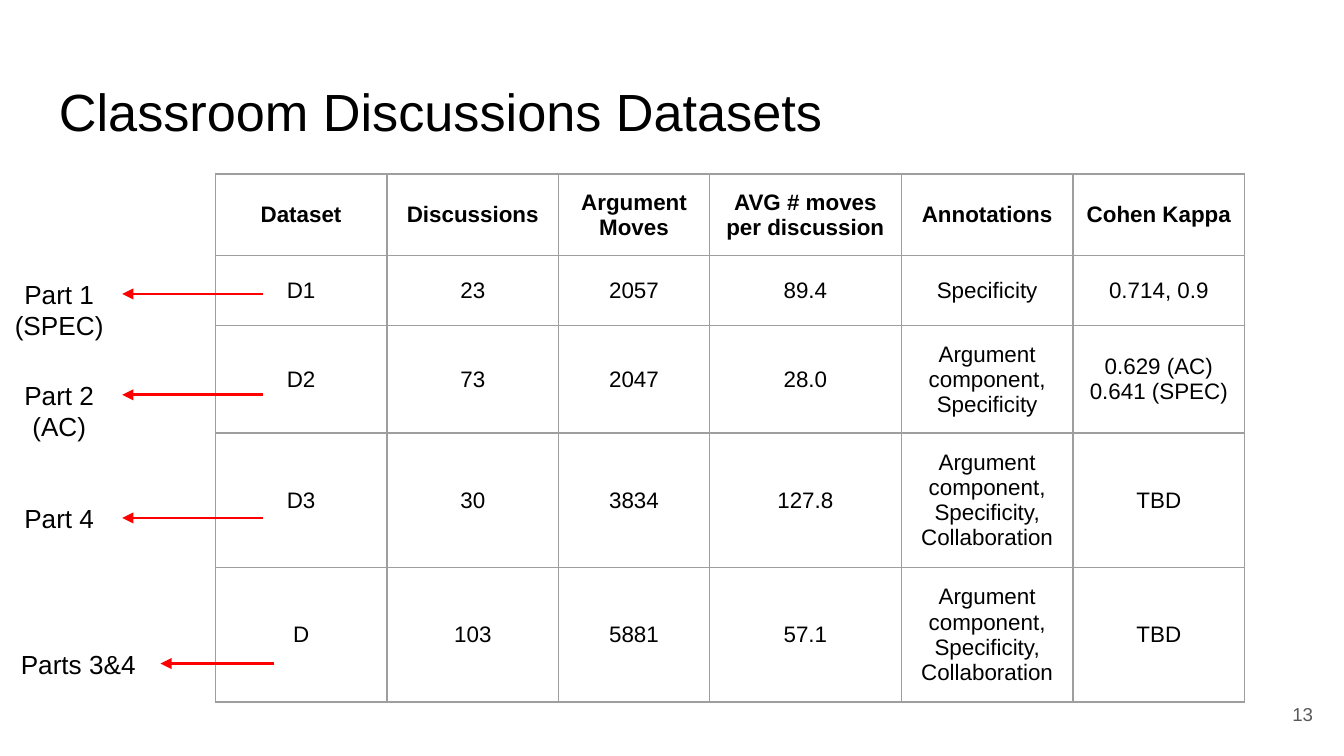
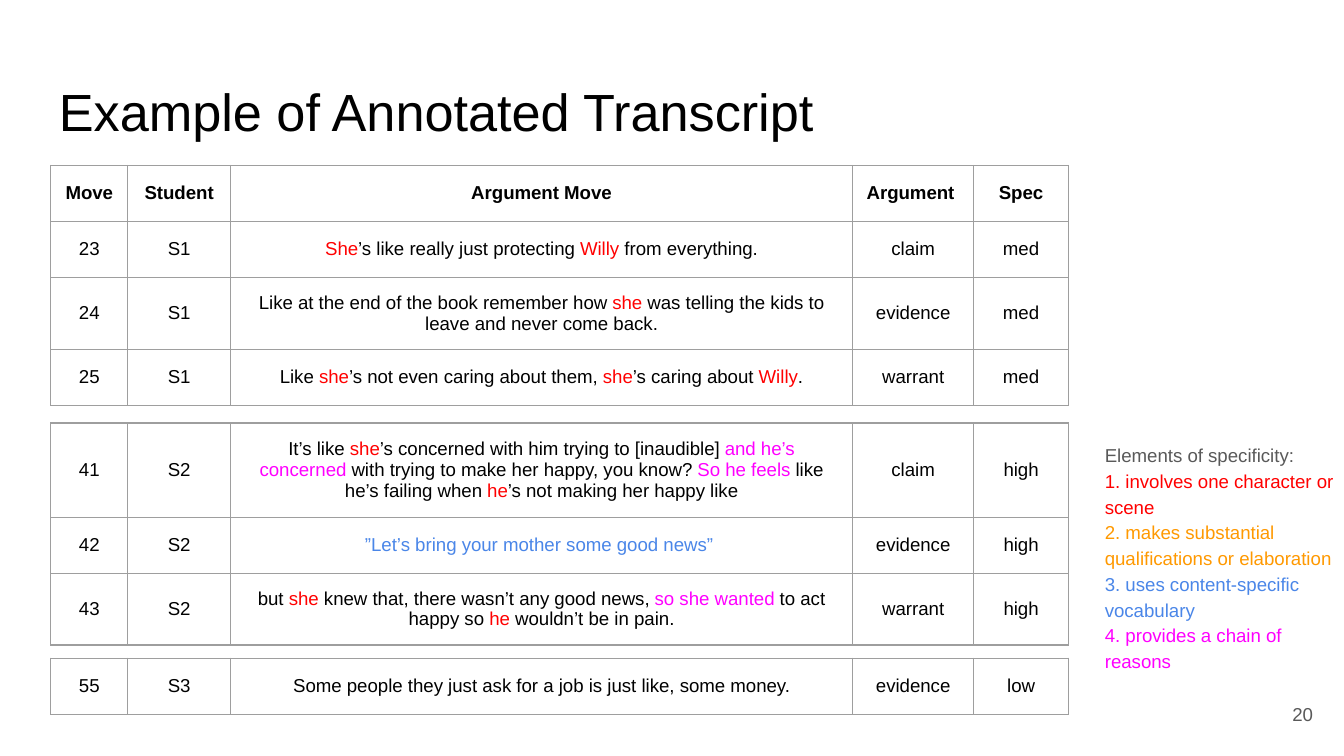
from lxml.etree import SubElement
from pptx import Presentation
from pptx.dml.color import RGBColor
from pptx.enum.shapes import MSO_CONNECTOR as LINE
from pptx.enum.text import MSO_ANCHOR as ANCHOR, PP_ALIGN as ALIGN
from pptx.oxml.ns import qn
from pptx.util import Pt

BLACK = RGBColor(0x00, 0x00, 0x00)
GREY = RGBColor(0x59, 0x59, 0x59)
RULE = RGBColor(0x9E, 0x9E, 0x9E)
RED = RGBColor(0xFF, 0x00, 0x00)
ORANGE = RGBColor(0xFF, 0x99, 0x00)
BLUE = RGBColor(0x4A, 0x86, 0xE8)
PINK = RGBColor(0xFF, 0x00, 0xFF)
PAD = Pt(7.2)


def write(box, lines, size, align=ALIGN.CENTER, color=BLACK, bold=False):
    """Fill a text frame; a line is a string or a list of (text, color) runs."""
    box.word_wrap = True
    for i, line in enumerate(lines):
        para = box.paragraphs[0] if i == 0 else box.add_paragraph()
        para.alignment = align
        for text, tint in [(line, color)] if isinstance(line, str) else line:
            run = para.add_run()
            run.text = text
            font = run.font
            font.name, font.size, font.bold = "Arial", Pt(size), bold
            font.color.rgb = tint


def add_grid(slide, left, top, cols, heights, rows, size, header=True):
    """Draw a ruled table; a cell is a string or a list of lines."""
    frame = slide.shapes.add_table(len(rows), len(cols), Pt(left), Pt(top),
                                   Pt(sum(cols)), Pt(sum(heights)))
    table = frame.table
    table.first_row = table.horz_banding = False
    for col, width in zip(table.columns, cols):
        col.width = Pt(width)
    for r, row in enumerate(rows):
        table.rows[r].height = Pt(heights[r])
        for c, item in enumerate(row):
            cell = table.cell(r, c)
            lines = [item] if isinstance(item, str) else item
            write(cell.text_frame, lines, size, bold=header and r == 0)
            cell.vertical_anchor = ANCHOR.MIDDLE
            cell.margin_left = cell.margin_right = PAD
            cell.margin_top = cell.margin_bottom = PAD
            props = cell._tc.get_or_add_tcPr()
            for side in ("a:lnL", "a:lnR", "a:lnT", "a:lnB"):
                edge = SubElement(props, qn(side), w=str(Pt(0.75)))
                fill = SubElement(edge, qn("a:solidFill"))
                SubElement(fill, qn("a:srgbClr"), val=str(RULE))
            cell.fill.background()


deck = Presentation()
deck.slide_width, deck.slide_height = Pt(720), Pt(405)

# Titles and page numbers
slides = []
for title, page in [("Classroom Discussions Datasets", "13"),
                    ("Example of Annotated Transcript", "20")]:
    slide = deck.slides.add_slide(deck.slide_layouts[6])
    slides.append(slide)
    head = slide.shapes.add_textbox(Pt(24.5), Pt(35.5), Pt(671), Pt(45))
    foot = slide.shapes.add_textbox(Pt(667), Pt(367), Pt(43.5), Pt(31))
    for box in (head.text_frame, foot.text_frame):
        box.margin_left = box.margin_right = PAD
        box.margin_top = box.margin_bottom = PAD
    write(head.text_frame, [title], 28, ALIGN.LEFT)
    write(foot.text_frame, [page], 10, ALIGN.RIGHT, GREY)
    foot.text_frame.vertical_anchor = ANCHOR.MIDDLE
data, talk = slides

# Dataset table
full = ["Argument component, Specificity,", "Collaboration"]
add_grid(data, 115.3, 93.2, [92, 92, 80.8, 102.8, 92, 92],
         [43.7, 37.5, 56.8, 71, 71], [
    ["Dataset", "Discussions", "Argument Moves",
     "AVG # moves per discussion", "Annotations", "Cohen Kappa"],
    ["D1", "23", "2057", "89.4", "Specificity", "0.714, 0.9"],
    ["D2", "73", "2047", "28.0", "Argument component, Specificity",
     ["0.629 (AC)", "0.641 (SPEC)"]],
    ["D3", "30", "3834", "127.8", full, "TBD"],
    ["D", "103", "5881", "57.1", full, "TBD"],
], 12)

# Part labels, each with an arrow from its row
for lines, top, width, start in [
    (["Part 1", "(SPEC)"], 142, 67.5, 141),
    (["Part 2", "(AC)"], 196, 67.5, 141),
    (["Part 4"], 262, 67.5, 141),
    (["Parts 3&4"], 340, 88, 147),
]:
    label = data.shapes.add_textbox(Pt(-2), Pt(top), Pt(width), Pt(31))
    box = label.text_frame
    box.margin_left = box.margin_right = PAD
    box.margin_top = box.margin_bottom = PAD
    write(box, lines, 14)
    mid = Pt(top + 15.5)
    arrow = data.shapes.add_connector(LINE.STRAIGHT, Pt(start), mid,
                                      Pt(width - 2), mid)
    arrow.end_connect(label, 3)
    arrow.line.color.rgb = RED
    arrow.line.width = Pt(1.5)
    SubElement(arrow.line._get_or_add_ln(), qn("a:tailEnd"), type="triangle")
    SubElement(arrow._element.spPr, qn("a:effectLst"))

# Transcript tables
first = [
    ["Move", "Student", "Argument Move", "Argument ", "Spec"],
    ["23", "S1", [[("She", RED), ("’s like really just protecting ", BLACK),
                   ("Willy", RED), (" from everything.", BLACK)]],
     "claim", "med"],
    ["24", "S1", [[("Like at the end of the book remember how ", BLACK),
                   ("she", RED),
                   (" was telling the kids to leave and never come back.",
                    BLACK)]],
     "evidence", "med"],
    ["25", "S1", [[("Like ", BLACK), ("she", RED),
                   ("’s not even caring about them, ", BLACK), ("she", RED),
                   ("’s caring about ", BLACK), ("Willy", RED),
                   (".", BLACK)]],
     "warrant", "med"],
]
second = [
    ["41", "S2", [[("It’s like ", BLACK), ("she", RED),
                   ("’s concerned with him trying to [inaudible] ", BLACK),
                   ("and he’s concerned", PINK),
                   (" with trying to make her happy, you know? ", BLACK),
                   ("So he feels", PINK),
                   (" like he’s failing when ", BLACK), ("he", RED),
                   ("’s not making her happy like", BLACK)]],
     "claim", "high"],
    ["42", "S2", [[("”Let’s bring your mother some good news” ", BLUE)]],
     "evidence", "high"],
    ["43", "S2", [[("but ", BLACK), ("she", RED),
                   (" knew that, there wasn’t any good news, ", BLACK),
                   ("so she wanted", PINK), (" to act happy so ", BLACK),
                   ("he", RED), (" wouldn’t be in pain.", BLACK)]],
     "warrant", "high"],
]
third = [["55", "S3",
          "Some people they just ask for a job is just like, some money.",
          "evidence", "low"]]
for top, rows in [(88.6, first), (226.6, second), (352.6, third)]:
    add_grid(talk, 27.2, top, [41.3, 55, 333.2, 65, 50.7],
             [30] * len(rows), rows, 10, header=rows is first)

# Key to the colors
key = talk.shapes.add_textbox(Pt(584.8), Pt(234.8), Pt(139.5), Pt(140.4))
box = key.text_frame
box.margin_left = box.margin_right = box.margin_top = PAD
box.margin_bottom = Pt(21)
box.vertical_anchor = ANCHOR.MIDDLE
write(box, [
    [("Elements of specificity:", GREY)],
    [("1. involves one character or scene", RED)],
    [("2. makes substantial qualifications or elaboration", ORANGE)],
    [("3. uses content-specific vocabulary", BLUE)],
    [("4. provides a chain of reasons", PINK)],
], 10, ALIGN.LEFT)
for para in box.paragraphs:
    para.line_spacing = 1.15

deck.save("out.pptx")
